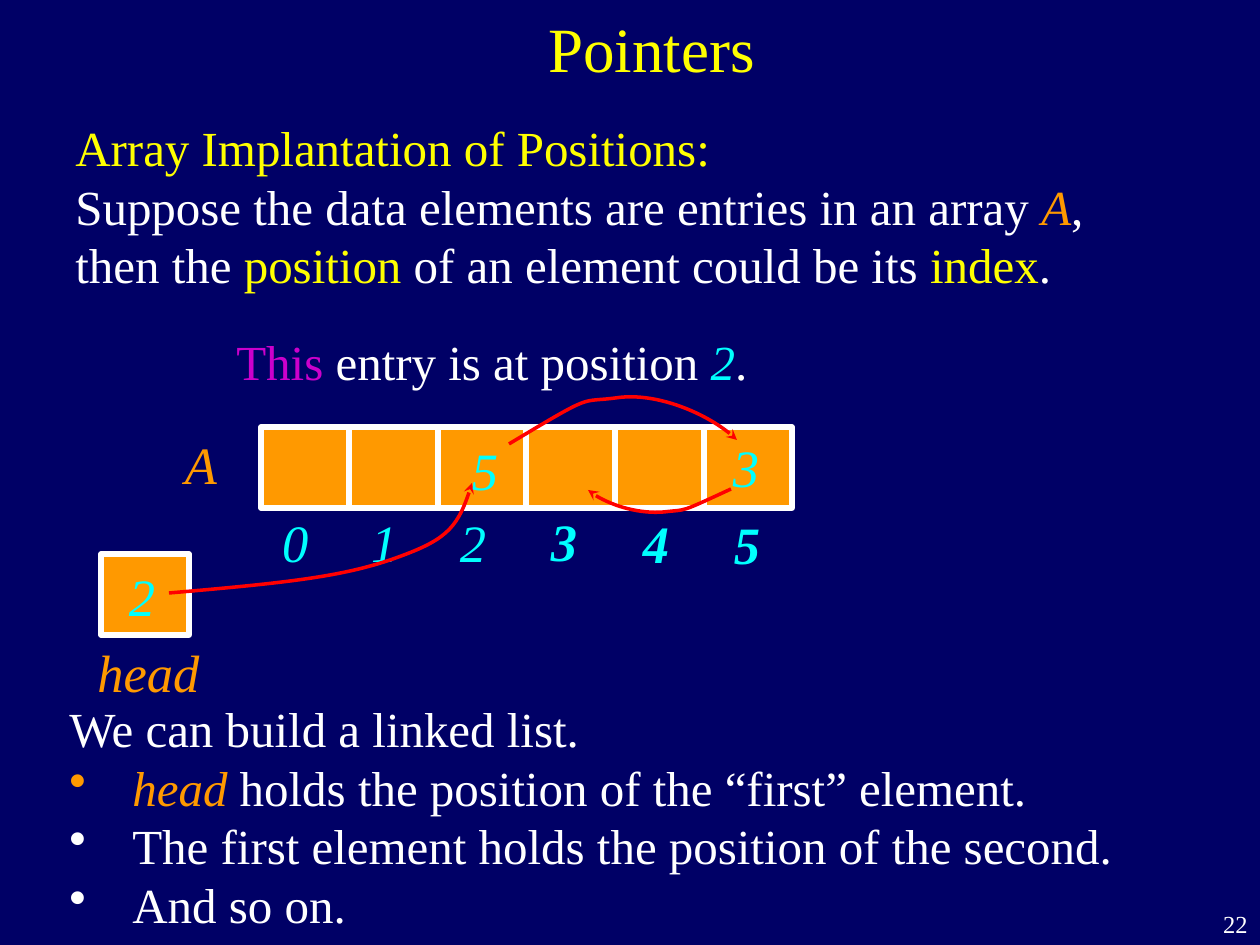
import pptx
import pptx.util
import pptx.dml.color
import pptx.enum.text
import pptx.enum.shapes
import pptx.oxml
import pptx.oxml.ns

SCALE = 914400 / 126  # EMU in one px
FONT = "Times New Roman"
HUES = {
    "navy": "000066", "white": "FFFFFF", "gold": "FFFF00", "orange": "FF9900",
    "cyan": "00FFFF", "plum": "CC00CC", "red": "FF0000",
}
ALIGN = pptx.enum.text.PP_ALIGN
ANCHOR = pptx.enum.text.MSO_ANCHOR
qn = pptx.oxml.ns.qn
hue = {name: pptx.dml.color.RGBColor.from_string(code) for name, code in HUES.items()}

deck = pptx.Presentation()
deck.slide_width = round(1260 * SCALE)
deck.slide_height = round(945 * SCALE)
slide = deck.slides.add_slide(deck.slide_layouts[6])
slide.background.fill.solid()
slide.background.fill.fore_color.rgb = hue["navy"]
shapes = slide.shapes


def write(box, lines, size=28, align=ALIGN.LEFT, inset=True, wrap=True,
          anchor=ANCHOR.TOP, bold=False, bullets=False):
    """Put lines in a text box; a line is a list of (text, colour[, italic])."""
    area = shapes.add_textbox(*[round(n * SCALE) for n in box])
    frame = area.text_frame
    frame.word_wrap = wrap
    frame.vertical_anchor = anchor
    if not inset:
        frame.margin_left = frame.margin_right = 0
        frame.margin_top = frame.margin_bottom = 0
    for i, line in enumerate(lines):
        para = frame.paragraphs[0] if i == 0 else frame.add_paragraph()
        para.alignment = align
        if bullets and i > 0:
            props = para._p.get_or_add_pPr()
            props.set("marL", "457200")
            props.set("indent", "-457200")
            props.append(pptx.oxml.parse_xml(
                f'<a:buChar {pptx.oxml.ns.nsdecls("a")} char="•"/>'))
        for text, tint, *slant in line:
            run = para.add_run()
            run.text = text
            run.font.name = FONT
            run.font.size = pptx.util.Pt(size)
            run.font.color.rgb = hue[tint]
            run.font.bold = bold
            run.font.italic = bool(slant)


def curve(points):
    """Draw a red Bezier arrow: a start point, then three points per arc."""
    pen = shapes.build_freeform(*points[0], scale=SCALE)
    pen.add_line_segments(points[1:], close=False)
    arrow = pen.convert_to_shape()
    arrow.shadow.inherit = False
    arrow.fill.background()
    arrow.line.color.rgb = hue["red"]
    arrow.line.width = pptx.util.Pt(2)
    steps = list(arrow._element.iter(qn("a:lnTo")))
    for i in range(0, len(steps), 3):
        arc = pptx.oxml.parse_xml(f'<a:cubicBezTo {pptx.oxml.ns.nsdecls("a")}/>')
        steps[i].addprevious(arc)
        for step in steps[i:i + 3]:
            arc.append(step[0])
            step.getparent().remove(step)
    arrow.line._get_or_add_ln().append(pptx.oxml.parse_xml(
        f'<a:tailEnd {pptx.oxml.ns.nsdecls("a")} type="stealth"/>'))


write((1197, 903, 63, 42), [[("22", "white")]], size=14, align=ALIGN.RIGHT)
write((116, -32, 1071, 158), [[("Pointers", "gold")]], size=36,
      align=ALIGN.CENTER, anchor=ANCHOR.MIDDLE)
write((63, 111, 1197, 428), [
    [("Array Implantation of Positions:", "gold")],
    [("Suppose the data elements are entries in an array ", "white"),
     ("A", "orange", True), (",", "white")],
    [("then the ", "white"), ("position", "gold"),
     (" of an element could be its ", "white"), ("index", "gold"), (".", "white")],
])
write((224, 325, 542, 72), [
    [("This", "plum"), (" entry is at position ", "white"),
     ("2", "cyan", True), (".", "white")],
], wrap=False)

# Array cells, then the head cell
cells = [(261 + 88.6 * i, 427) for i in range(6)] + [(101, 554)]
for left, top in cells:
    cell = shapes.add_shape(pptx.enum.shapes.MSO_SHAPE.RECTANGLE,
                            *[round(n * SCALE) for n in (left, top, 88, 81)])
    cell.shadow.inherit = False
    cell.fill.solid()
    cell.fill.fore_color.rgb = hue["orange"]
    cell.line.color.rgb = hue["white"]
    cell.line.width = pptx.util.Pt(3)

# Names and index numbers
for text, box in [("A", (158, 432, 86, 64)), ("head", (73, 640, 151, 63))]:
    write(box, [[(text, "orange", True)]], size=30, align=ALIGN.CENTER, inset=False)
for i in range(3):
    write((282 + 89 * i, 510, 44, 97), [[(str(i), "cyan", True)]],
          size=30, inset=False, wrap=False)
for text, left, top in [("3", 523, 509), ("4", 615, 511), ("5", 706, 512)]:
    write((left, top, 82, 64), [[(text, "cyan", True)]], size=30,
          align=ALIGN.CENTER, inset=False, bold=True)

# Links: the stored position and the arrow that follows it
links = [
    ("2", (129, 564), [(169, 593), (285, 583), (341, 577), (393, 559),
                       (444, 541), (459, 528), (472, 483)]),
    ("5", (472, 438), [(509, 444), (596, 392), (578, 403), (616, 398),
                       (654, 392), (712, 415), (737, 440)]),
    ("3", (733, 435), [(731, 489), (677, 514), (688, 509), (664, 512),
                       (640, 514), (604, 504), (588, 490)]),
]
for text, spot, points in links:
    write((*spot, 27, 63), [[(text, "cyan", True)]], size=30, inset=False, wrap=False)
    curve(points)

write((57, 692, 1114, 251), [
    [("We can build a linked list.", "white")],
    [("head ", "orange", True), ("holds the position of the “first” element.", "white")],
    [("The first element holds the position of the second.", "white")],
    [("And so on.", "white")],
], wrap=False, bullets=True)

deck.save("out.pptx")
